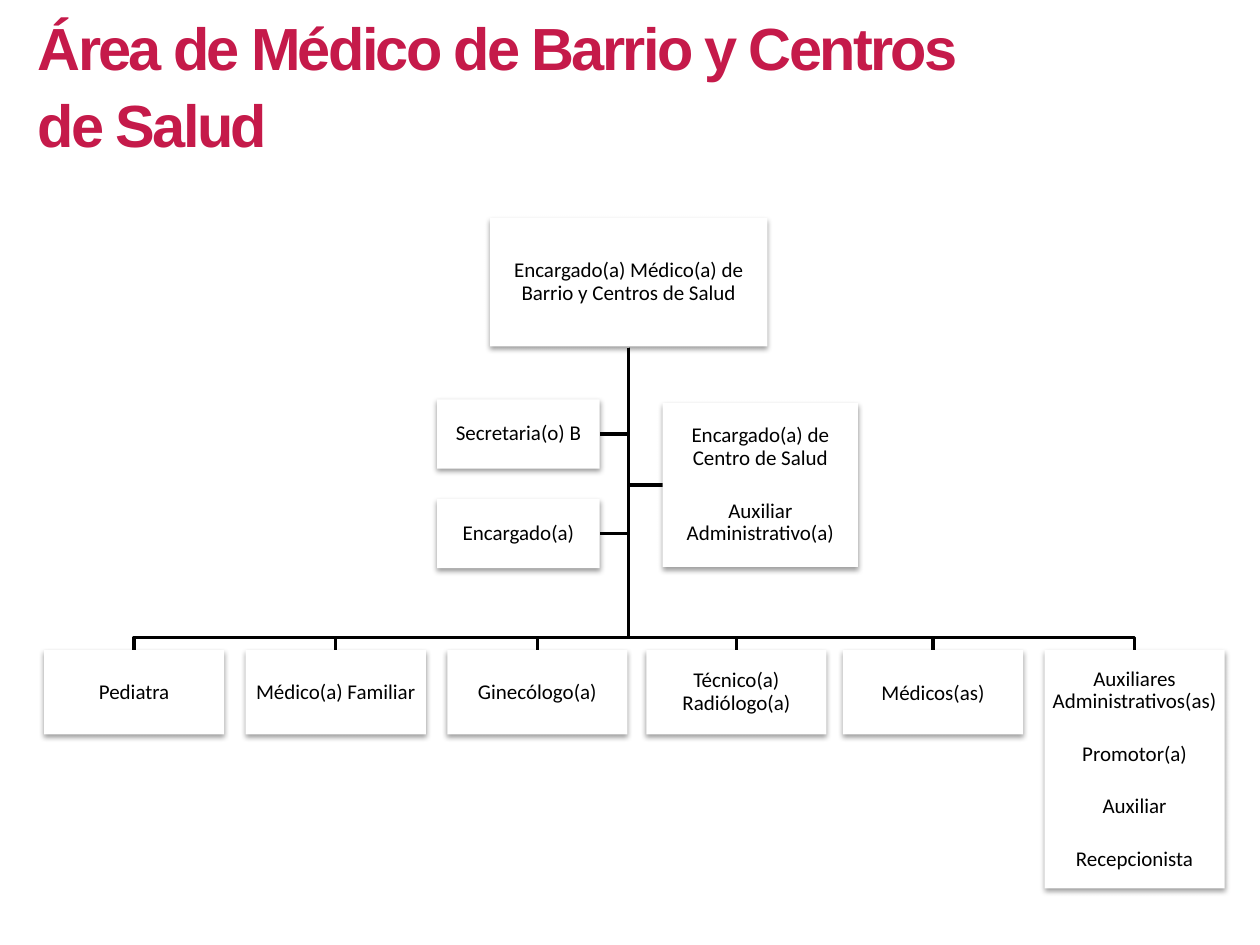
"""Build the organisation chart slide of the neighbourhood doctors and health centres area."""
from lxml import etree
from pptx import Presentation
from pptx.dml.color import RGBColor
from pptx.enum.shapes import MSO_SHAPE
from pptx.enum.text import MSO_ANCHOR, MSO_AUTO_SIZE, PP_ALIGN
from pptx.oxml.ns import nsdecls
from pptx.util import Inches, Pt

RECT = MSO_SHAPE.RECTANGLE
TOP, MIDDLE = MSO_ANCHOR.TOP, MSO_ANCHOR.MIDDLE
LEFT, CENTER = PP_ALIGN.LEFT, PP_ALIGN.CENTER
GROW = MSO_AUTO_SIZE.SHAPE_TO_FIT_TEXT

THEME = {
    "title": RGBColor(0xC5, 0x1A, 0x4A),
    "ink": RGBColor(0, 0, 0),
    "box": RGBColor(255, 255, 255),
    "title_font": "Arial",
    "box_font": "Calibri",
    "title_size": Pt(34),
    "box_size": Pt(12),
    "line": Pt(2),
    "para_gap": Pt(17),
}
SHADOW = (
    f'<a:outerShdw {nsdecls("a")} blurRad="{Pt(3.1)}" dist="{Pt(1.6)}" dir="5400000" rotWithShape="0">'
    '<a:srgbClr val="000000"><a:alpha val="38000"/></a:srgbClr></a:outerShdw>'
)

prs = Presentation()
prs.slide_width, prs.slide_height = Inches(10), Inches(7.5)
COL, ROW = prs.slide_width / 100, prs.slide_height / 75
s = prs.slides.add_slide(prs.slide_layouts[5])


def add_link(points):
    pts = [(round(x * COL), round(y * ROW)) for x, y in points]
    builder = s.shapes.build_freeform(*pts[0])
    builder.add_line_segments(pts[1:], close=False)
    sp = builder.convert_to_shape()
    sp.shadow.inherit = False
    sp.fill.background()
    sp.line.color.rgb = THEME["ink"]
    sp.line.width = THEME["line"]


def add_box(x, y, w, h, lines, spacing=0.9):
    sp = s.shapes.add_shape(RECT, round(x * COL), round(y * ROW), round(w * COL), round(h * ROW))
    sp.shadow.inherit = False
    sp._element.spPr.find("{*}effectLst").append(etree.fromstring(SHADOW))
    sp.fill.solid()
    sp.fill.fore_color.rgb = THEME["box"]
    sp.line.fill.background()
    tf = sp.text_frame
    tf.word_wrap = True
    tf.vertical_anchor = MIDDLE
    tf.margin_left = tf.margin_right = tf.margin_top = tf.margin_bottom = Inches(0.01)
    for i, line in enumerate(lines):
        p = tf.add_paragraph() if i else tf.paragraphs[0]
        p.alignment = CENTER
        p.line_spacing = spacing
        if i:
            p.space_before = THEME["para_gap"]
        r = p.add_run()
        r.text = line
        r.font.name = THEME["box_font"]
        r.font.size = THEME["box_size"]
        r.font.color.rgb = THEME["ink"]


title = s.shapes.title
title.left, title.top = round(2 * COL), 0
title.width, title.height = round(79.5 * COL), round(12.8 * ROW)
tf = title.text_frame
tf.word_wrap = True
tf.auto_size = GROW
tf.vertical_anchor = TOP
p = tf.paragraphs[0]
p.alignment = LEFT
p.line_spacing = 1.07
r = p.add_run()
r.text = "Área de Médico de Barrio y Centros de Salud"
r.font.name = THEME["title_font"]
r.font.size = THEME["title_size"]
r.font.bold = True
r.font.color.rgb = THEME["title"]
r.font._element.set("spc", "-150")

head = (38.9, 17.3, 22, 10.2)
trunk_x, trunk_y, bus_y = head[0] + head[2] / 2, 27.6, 50.6
staff = [
    (34.7, 31.7, 12.9, 5.5, ["Secretaria(o) B"]),
    (34.7, 39.6, 12.9, 5.5, ["Encargado(a)"]),
    (52.6, 32, 15.5, 13, ["Encargado(a) de Centro de Salud", "Auxiliar Administrativo(a)"]),
]
team_y, team_w, team_h = 51.6, 14.3, 6.7
team = [
    (3.5, team_h, 0.9, ["Pediatra"]),
    (19.5, team_h, 0.9, ["Médico(a) Familiar"]),
    (35.5, team_h, 0.9, ["Ginecólogo(a)"]),
    (51.3, team_h, 0.9, ["Técnico(a) Radiólogo(a)"]),
    (66.9, team_h, 1.0, ["Médicos(as)"]),
    (82.9, 18.9, 0.9, ["Auxiliares Administrativos(as)", "Promotor(a)", "Auxiliar", "Recepcionista"]),
]

for x, y, w, h, lines in staff:
    edge = x + w if x < trunk_x else x
    mid = y + h / 2
    add_link([(trunk_x, trunk_y), (trunk_x, mid), (edge, mid)])
for x, h, spacing, lines in team:
    mid = x + team_w / 2
    add_link([(trunk_x, trunk_y), (trunk_x, bus_y), (mid, bus_y), (mid, team_y)])

add_box(*head, ["Encargado(a) Médico(a) de Barrio y Centros de Salud"])
for box in staff:
    add_box(*box)
for x, h, spacing, lines in team:
    add_box(x, team_y, team_w, h, lines, spacing)

prs.save("out.pptx")
